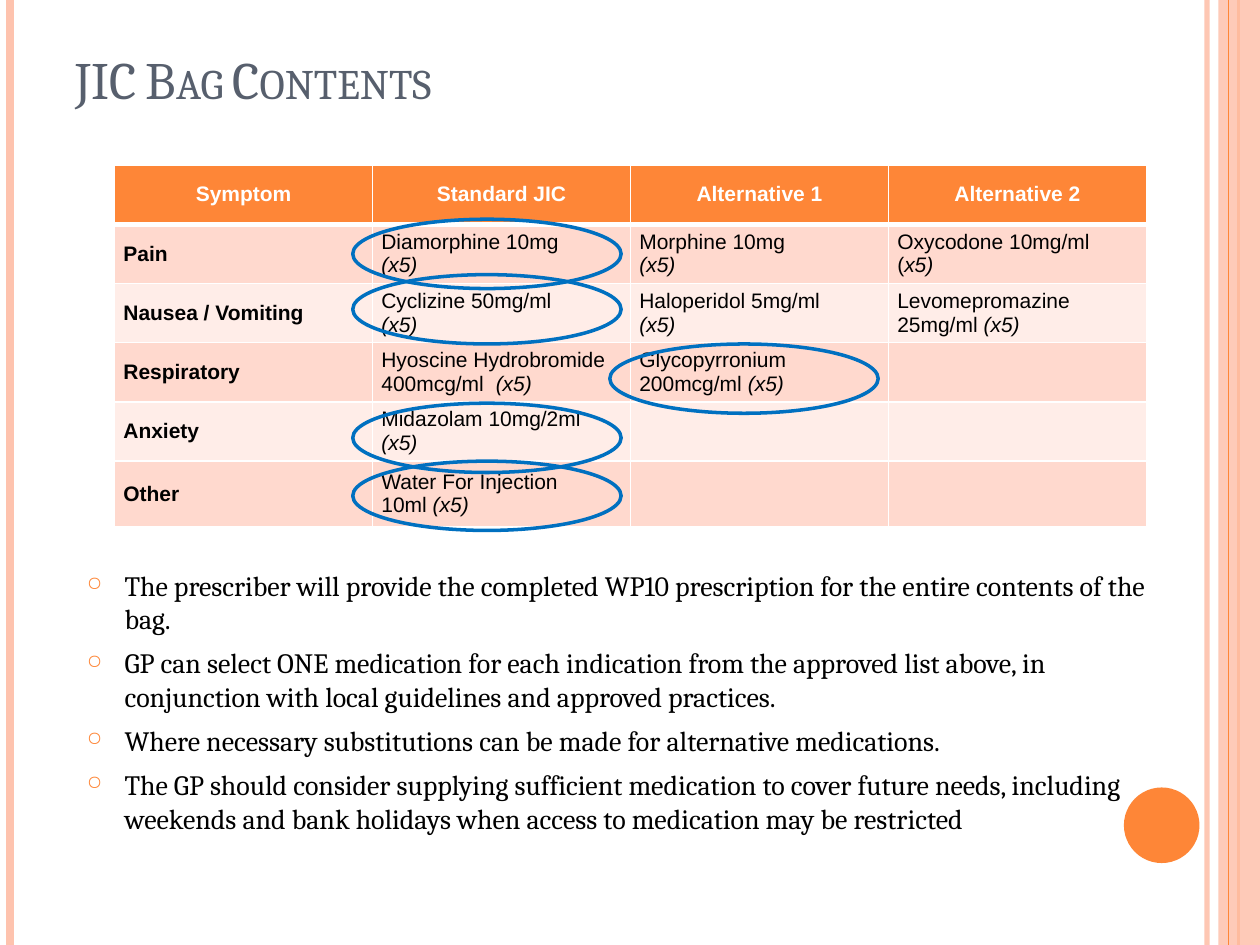
from dataclasses import dataclass
from lxml.etree import SubElement as Sub
from pptx import Presentation
from pptx.dml.color import RGBColor as Rgb
from pptx.enum.shapes import MSO_CONNECTOR as Conn, MSO_SHAPE as Kind
from pptx.enum.text import MSO_ANCHOR as Anchor, PP_ALIGN as Align
from pptx.oxml.ns import qn
from pptx.util import Inches as In, Pt


@dataclass(frozen=True)
class Theme:
    orange: str = "FE8637"
    peach: str = "FEC3AE"
    slate: str = "575F6D"
    blue: str = "0070C0"
    white: str = "FFFFFF"
    black: str = "000000"
    bands: tuple = ("FFD9CE", "FFEDE8")
    serif: str = "Cambria"
    sans: str = "Arial"
    title: int = 30
    body: int = 16
    cell: int = 12


def write(frame, text, font, size, color, bold=False, align=Align.LEFT, small=False):
    for num, line in enumerate(text.split("\n")):
        para = frame.add_paragraph() if num else frame.paragraphs[0]
        para.alignment = align
        for part, slant in zip(line.split("*"), (False, True)):
            run = para.add_run()
            run.text = part
            face = run.font
            face.name, face.size = font, Pt(size)
            face.bold, face.italic = bold, slant
            face.color.rgb = Rgb.from_string(color)
            if small:
                run._r.get_or_add_rPr().set("cap", "small")


def fade(shape, alpha):
    for tint in shape._element.spPr.iter(qn("a:srgbClr")):
        Sub(tint, qn("a:alpha"), val=str(alpha * 1000))


def edge(cell, side, color, width):
    line = Sub(cell._tc.get_or_add_tcPr(), qn(f"a:ln{side}"), w=str(Pt(width)))
    Sub(Sub(line, qn("a:solidFill")), qn("a:srgbClr"), val=color)


class Page:
    def __init__(self, deck, theme):
        self.theme = theme
        self.tall = deck.slide_height
        self.shapes = deck.slides.add_slide(deck.slide_layouts[6]).shapes

    def stripe(self, x, width, color, alpha=100):
        line = self.shapes.add_connector(Conn.STRAIGHT, In(x), 0, In(x), self.tall)
        line.line.color.rgb = Rgb.from_string(color)
        line.line.width = Pt(width)
        Sub(line._element.spPr, qn("a:effectLst"))
        if alpha < 100:
            fade(line, alpha)

    def shape(self, kind, box, fill=None, line=None, width=2, alpha=100):
        item = self.shapes.add_shape(kind, *map(In, box))
        item.shadow.inherit = False
        if fill:
            item.fill.solid()
            item.fill.fore_color.rgb = Rgb.from_string(fill)
        else:
            item.fill.background()
        if line:
            item.line.color.rgb = Rgb.from_string(line)
            item.line.width = Pt(width)
        else:
            item.line.fill.background()
        if alpha < 100:
            fade(item, alpha)

    def text(self, box, text, anchor=Anchor.TOP, **style):
        frame = self.shapes.add_textbox(*map(In, box)).text_frame
        frame.word_wrap = True
        frame.vertical_anchor = anchor
        write(frame, text, **style)
        return frame

    def list(self, box, items):
        look = self.theme
        frame = self.text(box, "\n".join(items), font=look.serif,
                          size=look.body, color=look.black)
        for para in frame.paragraphs:
            para.space_before = Pt(6)
            prop = para._p.get_or_add_pPr()
            prop.set("marL", str(In(0.3)))
            prop.set("indent", str(In(-0.3)))
            Sub(Sub(prop, qn("a:buClr")), qn("a:srgbClr"), val=look.orange)
            Sub(prop, qn("a:buSzPct"), val="70000")
            Sub(prop, qn("a:buChar"), char="○")

    def table(self, box, rows, highs):
        look = self.theme
        count = len(rows[0])
        grid = self.shapes.add_table(len(rows), count, *map(In, box)).table
        for col in grid.columns:
            col.width = In(box[2] / count)
        for row, high in enumerate(highs):
            grid.rows[row].height = In(high)
            for col in range(count):
                self.cell(grid.cell(row, col), rows[row][col], row, col)

    def cell(self, cell, text, row, col):
        look = self.theme
        head = row == 0
        cell.margin_left = cell.margin_right = In(0.07)
        cell.margin_top = cell.margin_bottom = 0
        cell.vertical_anchor = Anchor.MIDDLE
        for side in "LRTB":
            thick = (row, side) in ((0, "B"), (1, "T"))
            edge(cell, side, look.white, 3 if thick else 1)
        cell.fill.solid()
        fill = look.orange if head else look.bands[(row - 1) % 2]
        cell.fill.fore_color.rgb = Rgb.from_string(fill)
        if text:
            write(cell.text_frame, text, font=look.sans, size=look.cell,
                  color=look.white if head else look.black,
                  bold=head or col == 0,
                  align=Align.CENTER if head else Align.LEFT)


ROWS = [
    ("Symptom", "Standard JIC", "Alternative 1", "Alternative 2"),
    ("Pain", "Diamorphine 10mg\n*(x5)", "Morphine 10mg\n*(x5)",
     "Oxycodone 10mg/ml\n(*x5)"),
    ("Nausea / Vomiting", "Cyclizine 50mg/ml\n*(x5)",
     "Haloperidol 5mg/ml\n*(x5)", "Levomepromazine 25mg/ml *(x5)"),
    ("Respiratory", "Hyoscine Hydrobromide\n400mcg/ml  *(x5)",
     "Glycopyrronium 200mcg/ml *(x5)", ""),
    ("Anxiety", "Midazolam 10mg/2ml *(x5)", "", ""),
    ("Other", "Water For Injection\n10ml *(x5)", "", ""),
]
NOTES = [
    "The prescriber will provide the completed WP10 prescription for the entire "
    "contents of the bag.",
    "GP can select ONE medication for each indication from the approved list above, "
    "in conjunction with local guidelines and approved practices.",
    "Where necessary substitutions can be made for alternative medications.",
    "The GP should consider supplying sufficient medication to cover future needs, "
    "including weekends and bank holidays when access to medication may be restricted",
]
RINGS = [(2.8, 1.74), (2.8, 2.18), (4.84, 2.73), (2.8, 3.2), (2.8, 3.66)]


def main():
    deck = Presentation()
    deck.slide_width, deck.slide_height = In(10), In(7.5)
    look = Theme()
    page = Page(deck, look)

    page.stripe(9.58, 3, look.peach, alpha=93)
    page.stripe(0.08, 4.5, look.peach)
    page.stripe(9.83, 1.5, look.orange)
    page.shape(Kind.RECTANGLE, (9.67, 0, 0.33, 7.5), fill=look.peach, alpha=87)
    page.stripe(9.75, 0.75, look.orange)
    page.shape(Kind.OVAL, (8.92, 6.25, 0.6, 0.6), fill=look.orange)

    page.text((0.5, 0.21, 8.17, 0.71), "JIC Bag Contents", anchor=Anchor.BOTTOM,
              font=look.serif, size=look.title, color=look.slate, small=True)
    page.table((0.91, 1.31, 8.19, 2.87), ROWS, [0.47] * 5 + [0.52])
    page.list((0.59, 4.46, 8.75, 3), NOTES)
    for left, top in RINGS:
        page.shape(Kind.OVAL, (left, top, 2.13, 0.55), line=look.blue)

    deck.save("out.pptx")


if __name__ == "__main__":
    main()
